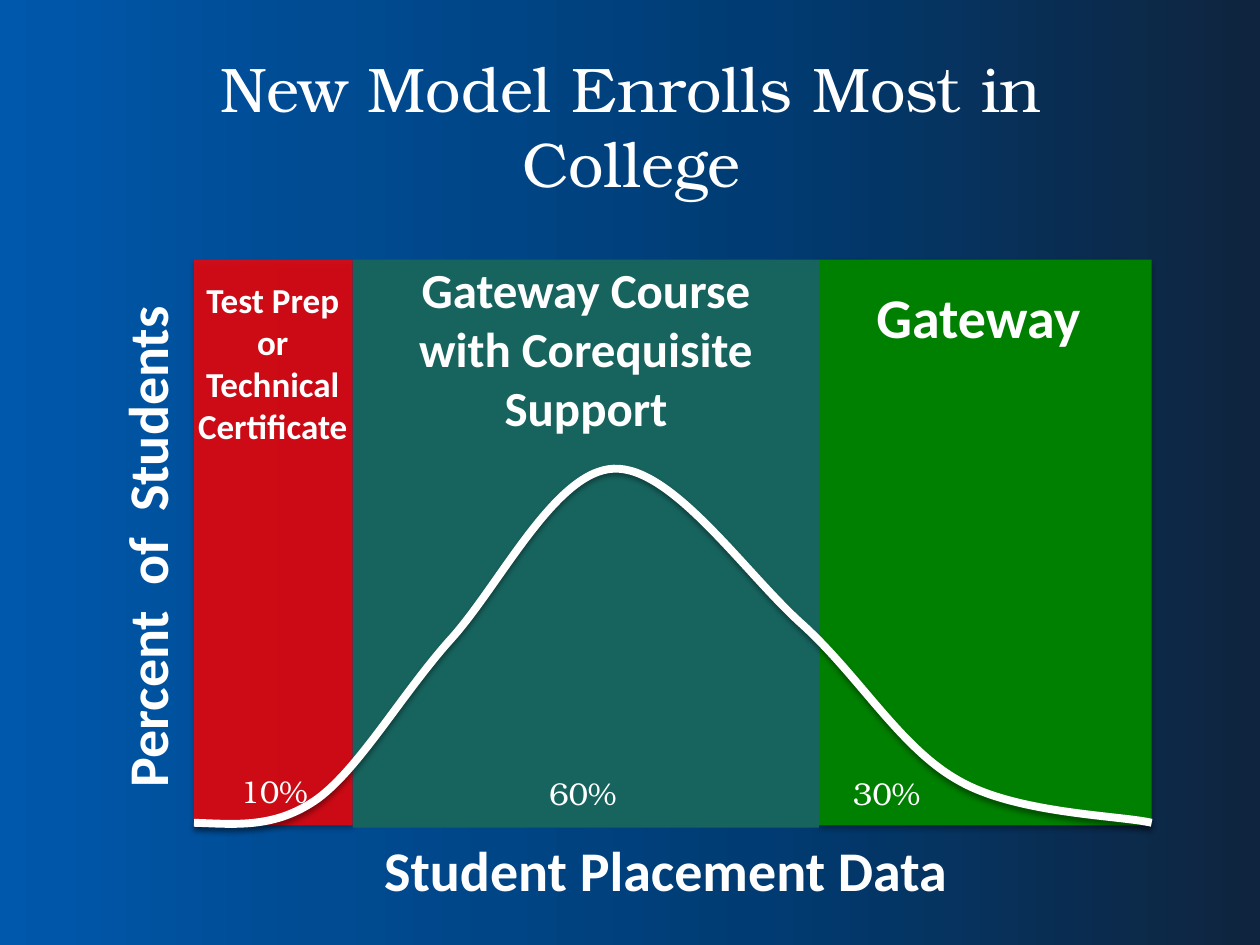
from lxml import etree
from pptx import Presentation
from pptx.dml.color import RGBColor
from pptx.enum.shapes import MSO_SHAPE
from pptx.enum.text import PP_ALIGN
from pptx.oxml import parse_xml
from pptx.oxml.ns import nsdecls, qn
from pptx.util import Inches, Pt

RECT = MSO_SHAPE.RECTANGLE
LEFT, MID = PP_ALIGN.LEFT, PP_ALIGN.CENTER
SERIF, SANS = "TeX Gyre Bonum", "Calibri"
HUES = {"white": "FFFFFF", "red": "FF0000", "teal": "17645F", "green": "008000"}
STOPS = [(0, "0058AC"), (26, "004B92"), (60, "003C73"), (100, "0F243E")]

deck = Presentation()
deck.slide_width, deck.slide_height = Inches(10), Inches(7.5)
slide = deck.slides.add_slide(deck.slide_layouts[6])
shapes = slide.shapes


def add_shade(shape, alpha):
    shape.shadow.inherit = False
    effects = shape._element.spPr.find(qn("a:effectLst"))
    effects.append(parse_xml(
        f'<a:outerShdw {nsdecls("a")} blurRad="{Pt(3.1)}" dist="{Pt(1.8)}" '
        f'dir="5400000" rotWithShape="0"><a:srgbClr val="000000">'
        f'<a:alpha val="{alpha * 1000}"/></a:srgbClr></a:outerShdw>'))


def add_text(text, box, size, font, bold=False, align=MID, turn=0):
    label = shapes.add_textbox(*map(Inches, box))
    label.rotation = turn
    frame = label.text_frame
    frame.word_wrap = True
    line = frame.paragraphs[0]
    line.text = text
    line.alignment = align
    line.font.size = Pt(size)
    line.font.name = font
    line.font.bold = bold
    line.font.color.rgb = RGBColor.from_string(HUES["white"])


back = shapes.add_shape(RECT, 0, 0, deck.slide_width, deck.slide_height)
back.line.fill.background()
back.fill.gradient()
back.fill.gradient_angle = 0
ramp = back._element.spPr.find(qn("a:gradFill")).find(qn("a:gsLst"))
for stop in list(ramp):
    ramp.remove(stop)
for place, hue in STOPS:
    stop = etree.SubElement(ramp, qn("a:gs"), pos=str(place * 1000))
    etree.SubElement(stop, qn("a:srgbClr"), val=hue)
add_shade(back, 35)

add_text("New Model Enrolls Most in College", (1.31, 0.34, 7.4, 0.89), 36, SERIF)

bands = [("green", 6.5, 2.64, 4.49), ("red", 1.54, 1.26, 4.49), ("teal", 2.8, 3.7, 4.51)]
for hue, left, width, height in bands:
    band = shapes.add_shape(RECT, Inches(left), Inches(2.06), Inches(width), Inches(height))
    band.fill.solid()
    band.fill.fore_color.rgb = RGBColor.from_string(HUES[hue])
    band.line.fill.background()
    band.shadow.inherit = False
    if hue != "teal":
        add_shade(band, 35)
    if hue == "red":
        tint = band._element.spPr.find(qn("a:solidFill"))[0]
        etree.SubElement(tint, qn("a:alpha"), val="80000")

add_text("Percent  of  Students", (-0.99, 4.02, 4.3, 0.64), 32, SANS, True, turn=270)
add_text("Student Placement Data", (1.56, 6.58, 7.45, 0.64), 32, SANS, True)

start = (1.54, 6.53)
bends = [
    ((1.87, 6.54), (2.18, 6.58), (2.52, 6.34)),
    ((2.86, 6.09), (3.2, 5.49), (3.59, 5.06)),
    ((3.98, 4.62), (4.41, 3.74), (4.87, 3.72)),
    ((5.33, 3.7), (5.9, 4.53), (6.35, 4.94)),
    ((6.81, 5.35), (7.14, 5.93), (7.6, 6.19)),
    ((8.06, 6.46), (8.88, 6.47), (9.14, 6.53)),
]
pen = shapes.build_freeform(*map(Inches, start))
pen.add_line_segments([tuple(map(Inches, dot)) for bend in bends for dot in bend], close=False)
curve = pen.convert_to_shape()
track = next(curve._element.iter(qn("a:path")))
legs = track.findall(qn("a:lnTo"))
for first in range(0, len(legs), 3):
    arc = etree.SubElement(track, qn("a:cubicBezTo"))
    for leg in legs[first:first + 3]:
        arc.append(leg[0])
        track.remove(leg)
curve.fill.background()
curve.line.color.rgb = RGBColor.from_string(HUES["white"])
curve.line.width = Pt(4.5)
add_shade(curve, 38)

shares = [
    ("30%", (6.67, 6.09, 0.85, 0.4)),
    ("10%", (1.81, 6.08, 1, 0.41)),
    ("60%", (4.26, 6.09, 1.07, 0.41)),
]
for text, box in shares:
    add_text(text, box, 18, SERIF, align=LEFT)

heads = [
    ("Gateway", (6.5, 2.19, 2.53, 0.65), 32),
    ("Test Prep or Technical Certificate", (1.41, 2.16, 1.51, 1.45), 20),
    ("Gateway Course with Corequisite Support", (3.15, 2.01, 3, 1.51), 28),
]
for text, box, size in heads:
    add_text(text, box, size, SANS, True)

deck.save("out.pptx")
